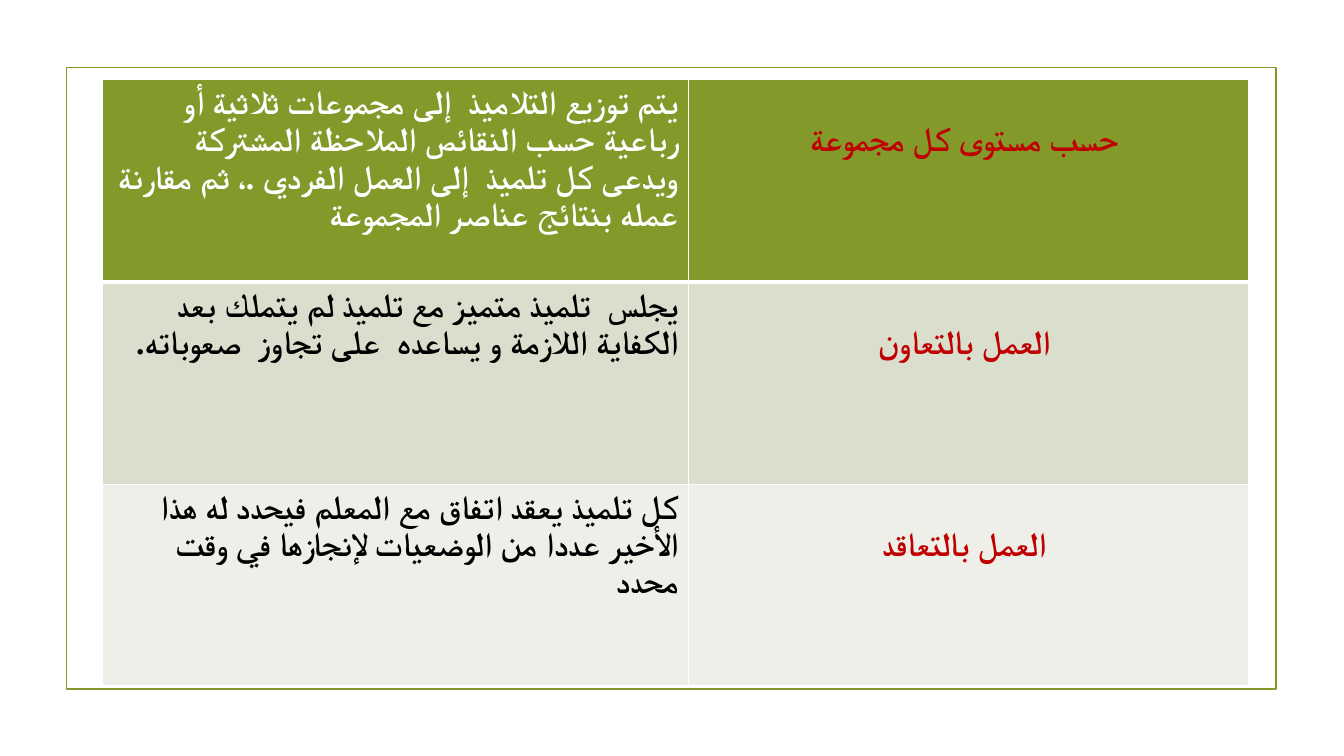
from typing import NamedTuple

from lxml import etree
from pptx import Presentation
from pptx.dml.color import RGBColor
from pptx.enum.shapes import MSO_SHAPE
from pptx.enum.text import PP_ALIGN
from pptx.oxml.ns import qn
from pptx.util import Cm, Pt

RECT = MSO_SHAPE.RECTANGLE
CENTER, RIGHT = PP_ALIGN.CENTER, PP_ALIGN.RIGHT
FONT = "Times New Roman"
COLORS = {
    "green": "83992A",
    "band_dark": "D9DECD",
    "band_light": "EDEFE8",
    "white": "FFFFFF",
    "black": "000000",
    "red": "C00000",
}
COL_WIDTHS = (14.76, 14.12)
ROW_HEIGHTS = (5.1, 5.1, 5.06)
THIN, THICK = 1, 3


class Method(NamedTuple):
    description: str
    name: str
    fill: str
    text_color: str
    top: int
    bottom: int


METHODS = (
    Method(
        "يتم توزيع التلاميذ  إلى مجموعات ثلاثية أو رباعية حسب النقائص الملاحظة "
        "المشتركة  ويدعى كل تلميذ  إلى العمل الفردي .، ثم مقارنة عمله بنتائج "
        "عناصر المجموعة ",
        "حسب مستوى كل مجموعة ", "green", "white", THIN, THICK),
    Method(
        "يجلس  تلميذ متميز مع تلميذ لم يتملك بعد الكفاية اللازمة و يساعده  على "
        "تجاوز  صعوباته.",
        "العمل بالتعاون ", "band_dark", "black", THICK, THIN),
    Method(
        "كل تلميذ يعقد اتفاق مع المعلم فيحدد له هذا الأخير عددا من الوضعيات "
        "لإنجازها في وقت محدد ",
        "العمل بالتعاقد ", "band_light", "black", THIN, THIN),
)


def rgb(name: str) -> RGBColor:
    return RGBColor.from_string(COLORS[name])


def add_borders(cell, top: int, bottom: int) -> None:
    """Give a cell white borders; call before its fill is set."""
    tc_pr = cell._tc.get_or_add_tcPr()
    widths = {"a:lnL": THIN, "a:lnR": THIN, "a:lnT": top, "a:lnB": bottom}
    for tag, width in widths.items():
        ln = etree.SubElement(tc_pr, qn(tag), w=str(Pt(width)))
        fill = etree.SubElement(ln, qn("a:solidFill"))
        etree.SubElement(fill, qn("a:srgbClr"), val=COLORS["white"])


def write_cell(cell, text: str, color: str, method: Method):
    """Fill and format a cell, and return its paragraph."""
    add_borders(cell, method.top, method.bottom)
    cell.fill.solid()
    cell.fill.fore_color.rgb = rgb(method.fill)
    p = cell.text_frame.paragraphs[0]
    p.text = text
    r = p.runs[0]
    r.font.size = Pt(24)
    r.font.bold = True
    r.font.color.rgb = rgb(color)
    r.font.name = FONT
    etree.SubElement(r.font._element, qn("a:cs"), typeface=FONT)
    return p


def add_frame(s) -> None:
    sp = s.shapes.add_shape(RECT, Cm(1.68), Cm(1.7), Cm(30.48), Cm(15.67))
    sp.shadow.inherit = False
    sp.fill.background()
    sp.line.color.rgb = rgb("green")
    sp.line.width = Pt(1.25)


def add_methods_table(s) -> None:
    table = s.shapes.add_table(
        len(METHODS), len(COL_WIDTHS), Cm(2.59), Cm(2.01),
        Cm(sum(COL_WIDTHS)), Cm(sum(ROW_HEIGHTS))).table
    for column, width in zip(table.columns, COL_WIDTHS):
        column.width = Cm(width)
    for row, height, method in zip(table.rows, ROW_HEIGHTS, METHODS):
        row.height = Cm(height)
        description, name = row.cells
        p = write_cell(description, method.description, method.text_color, method)
        p.alignment = RIGHT
        p._p.get_or_add_pPr().set("rtl", "1")
        p = write_cell(name, method.name, "red", method)
        p.alignment = CENTER
        p.line_spacing = 2.0


def main() -> None:
    prs = Presentation()
    prs.slide_width, prs.slide_height = Cm(33.87), Cm(19.05)
    s = prs.slides.add_slide(prs.slide_layouts[6])
    add_frame(s)
    add_methods_table(s)
    prs.save("out.pptx")


if __name__ == "__main__":
    main()
